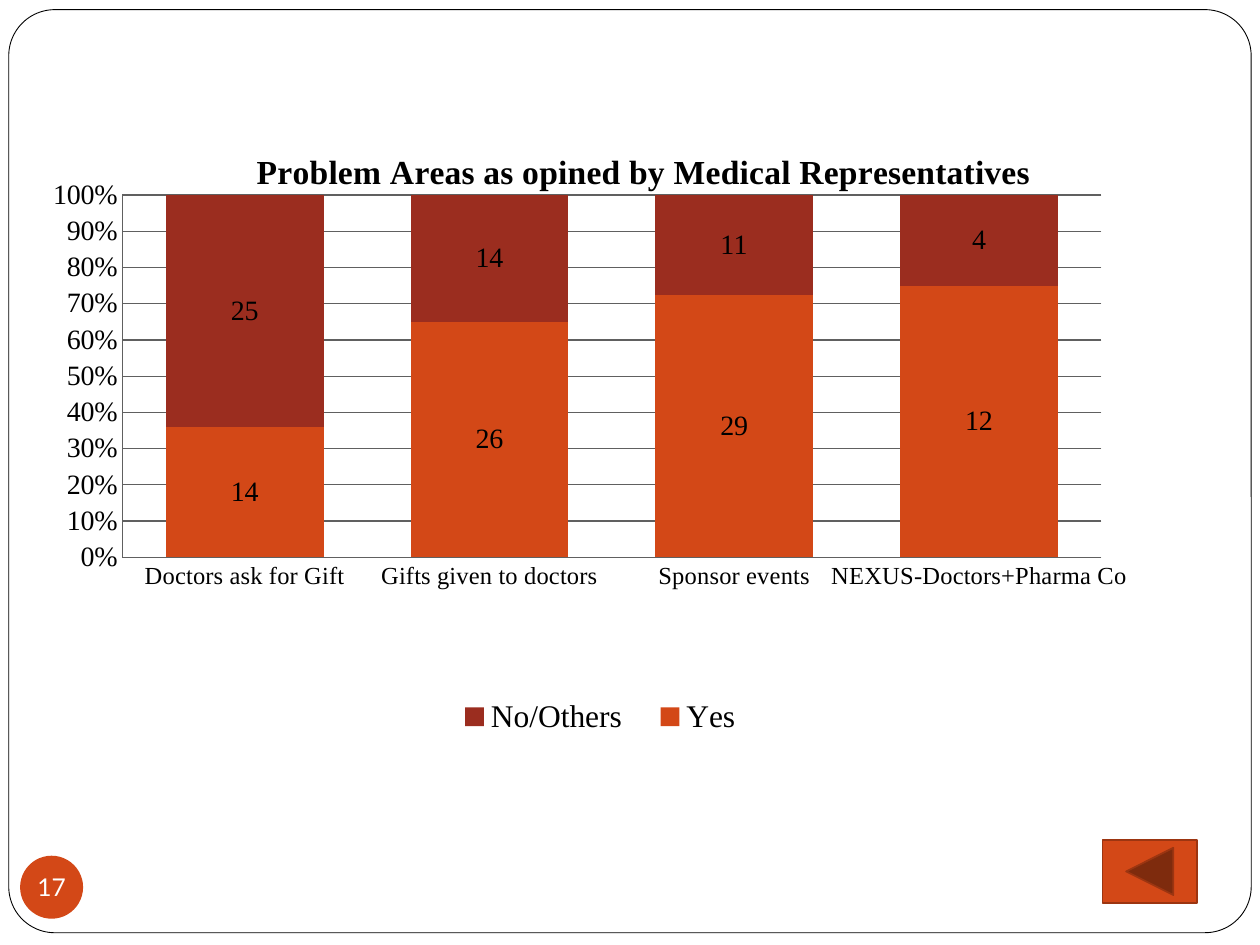
import pptx
import pptx.chart.data
import pptx.dml.color
import pptx.enum.chart
import pptx.enum.shapes
import pptx.enum.text
import pptx.oxml
import pptx.oxml.ns
import pptx.util

Pt = pptx.util.Pt
RGB = pptx.dml.color.RGBColor.from_string
SHAPE = pptx.enum.shapes.MSO_SHAPE
XL = pptx.enum.chart

COLORS = {"white": "FFFFFF", "black": "000000", "orange": "D34817",
          "red": "9B2D1F", "edge": "9C3511", "grid": "606060"}


def add_shape(s, kind, left, top, width, height, fill, line=None, weight=0):
    sp = s.shapes.add_shape(kind, Pt(left), Pt(top), Pt(width), Pt(height))
    sp.shadow.inherit = False
    sp.fill.solid()
    sp.fill.fore_color.rgb = RGB(COLORS[fill])
    if line:
        sp.line.color.rgb = RGB(COLORS[line])
        sp.line.width = Pt(weight)
    else:
        sp.line.fill.background()
    return sp


def set_layout(element, before, inner=False, **fractions):
    """Place a chart part by fractions of the chart, ahead of the named tags."""
    for old in element.findall(pptx.oxml.ns.qn("c:layout")):
        element.remove(old)
    target = '<c:layoutTarget val="inner"/>' if inner else ""
    modes = "".join(f'<c:{k}Mode val="edge"/>' for k in fractions if k in "xy")
    values = "".join(f'<c:{k} val="{v}"/>' for k, v in fractions.items())
    layout = pptx.oxml.parse_xml(
        f'<c:layout {pptx.oxml.ns.nsdecls("c")}><c:manualLayout>'
        f'{target}{modes}{values}</c:manualLayout></c:layout>')
    tags = [pptx.oxml.ns.qn(tag) for tag in before]
    next(e for e in element if e.tag in tags).addprevious(layout)


prs = pptx.Presentation()
prs.slide_width, prs.slide_height = Pt(720), Pt(540)
s = prs.slides.add_slide(prs.slide_layouts[6])

# Frame, page number and back button
frame = add_shape(s, SHAPE.ROUNDED_RECTANGLE, 5, 5.5, 710, 527.5, "white", "black", 0.5)
frame.adjustments[0] = 0.05

badge = add_shape(s, SHAPE.OVAL, 11.5, 489, 36, 36, "orange")
tf = badge.text_frame
tf.margin_left = tf.margin_right = tf.margin_top = tf.margin_bottom = 0
tf.word_wrap = False
tf.vertical_anchor = pptx.enum.text.MSO_ANCHOR.MIDDLE
tf.text = "17"
p = tf.paragraphs[0]
p.alignment = pptx.enum.text.PP_ALIGN.CENTER
r = p.runs[0]
r.font.name, r.font.size = "Lato", Pt(14)
r.font.color.rgb = RGB(COLORS["white"])

add_shape(s, SHAPE.ACTION_BUTTON_BACK_OR_PREVIOUS, 630, 480, 54, 36, "orange", "edge", 1)

# Chart
data = pptx.chart.data.CategoryChartData()
data.categories = ["Doctors ask for Gift", "Gifts given to doctors",
                   "Sponsor events", "NEXUS-Doctors+Pharma Co"]
data.add_series("Yes", [14, 26, 29, 12])
data.add_series("No/Others", [25, 14, 11, 4])
chart = s.shapes.add_chart(XL.XL_CHART_TYPE.COLUMN_STACKED_100, Pt(30), Pt(66),
                           Pt(666), Pt(414), data).chart
chart.font.name, chart.font.size = "Times New Roman", Pt(16)
chart.font.color.rgb = RGB(COLORS["black"])

chart.has_title = True
tf = chart.chart_title.text_frame
tf.text = "Problem Areas as opined by Medical Representatives"
font = tf.paragraphs[0].runs[0].font
font.name, font.size, font.bold = "Times New Roman", Pt(19.2), True
font.color.rgb = RGB(COLORS["black"])
title = chart.chart_title._element
set_layout(title, ["c:overlay"], x=0.17, y=0.04)

plot = chart.plots[0]
plot.gap_width, plot.overlap = 55, 100
plot.vary_by_categories = False
for series, color in zip(plot.series, ["orange", "red"]):
    series.format.fill.solid()
    series.format.fill.fore_color.rgb = RGB(COLORS[color])
    labels = series.data_labels
    labels.show_value = True
    labels.position = XL.XL_LABEL_POSITION.CENTER
set_layout(chart._chartSpace.chart.plotArea, ["c:barChart"], inner=True,
           x=0.06, y=0.11, w=0.84, h=0.5)

value_axis, category_axis = chart.value_axis, chart.category_axis
value_axis.has_major_gridlines = True
value_axis.maximum_scale, value_axis.minimum_scale = 1, 0
value_axis.major_unit = 0.1
value_axis.tick_labels.number_format = "0%"
value_axis.tick_labels.number_format_is_linked = False
category_axis.tick_labels.font.size = Pt(14)
for axis in (value_axis, category_axis):
    axis.major_tick_mark = XL.XL_TICK_MARK.NONE
for part in (value_axis, category_axis, value_axis.major_gridlines):
    part.format.line.color.rgb = RGB(COLORS["grid"])
    part.format.line.width = Pt(0.75)

chart.has_legend = True
legend = chart.legend
legend.position = XL.XL_LEGEND_POSITION.RIGHT
legend.include_in_layout = False
legend.font.size = Pt(18)
set_layout(legend._element, ["c:overlay"], x=0.33, y=0.79, w=0.28, h=0.08)

prs.save("out.pptx")
